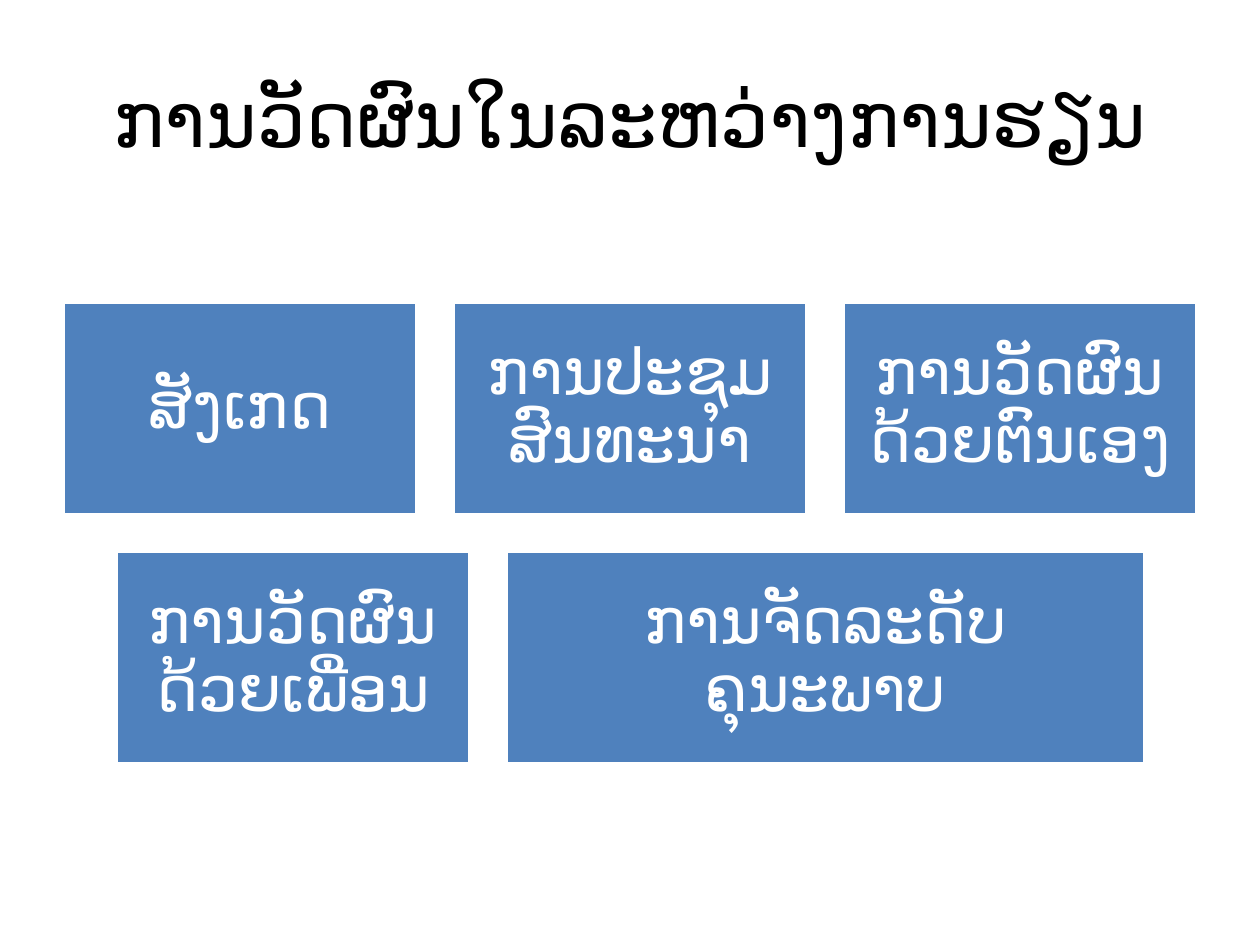
from dataclasses import dataclass

from pptx import Presentation
from pptx.dml.color import RGBColor
from pptx.enum.shapes import MSO_SHAPE
from pptx.enum.text import MSO_ANCHOR, PP_ALIGN
from pptx.slide import Slide
from pptx.text.text import TextFrame
from pptx.util import Emu, Pt

PX_PER_INCH = 126
SLIDE_WIDTH, SLIDE_HEIGHT = 1260, 945
BOX_WIDTH, WIDE_BOX_WIDTH, BOX_HEIGHT = 354, 639, 213
GAP, PADDING, FIRST_ROW_TOP = 36, 19, 302
FONT = "Calibri"


@dataclass(frozen=True)
class Method:
    text: str
    width: int = BOX_WIDTH


TITLE = "ການວັດຜົນໃນລະຫວ່າງການຮຽນ"
METHOD_ROWS = [
    [
        Method("ສັງເກດ"),
        Method("ການປະຊຸມສົນທະນາ"),
        Method("ການວັດຜົນດ້ວຍຕົນເອງ"),
    ],
    [
        Method("ການວັດຜົນດ້ວຍເພື່ອນ"),
        Method("ການຈັດລະດັບຄຸນະພາບ", WIDE_BOX_WIDTH),
    ],
]


def px(length: int) -> Emu:
    return Emu(round(length * 914400 / PX_PER_INCH))


def color(value: str) -> RGBColor:
    return RGBColor.from_string(value)


def write_text(text_frame: TextFrame, text: str, size: int, text_color: str) -> None:
    text_frame.text = text
    text_frame.word_wrap = True
    text_frame.vertical_anchor = MSO_ANCHOR.MIDDLE
    paragraph = text_frame.paragraphs[0]
    paragraph.alignment = PP_ALIGN.CENTER
    font = paragraph.runs[0].font
    font.name = FONT
    font.size = Pt(size)
    font.color.rgb = color(text_color)


def draw_title(slide: Slide) -> None:
    title = slide.shapes.title
    title.left, title.top = px(63), px(38)
    title.width, title.height = px(1134), px(157)
    write_text(title.text_frame, TITLE, 44, "000000")


def draw_method(slide: Slide, method: Method, left: int, top: int) -> None:
    shape = slide.shapes.add_shape(
        MSO_SHAPE.RECTANGLE, px(left), px(top), px(method.width), px(BOX_HEIGHT)
    )
    shape.shadow.inherit = False
    shape.fill.solid()
    shape.fill.fore_color.rgb = color("4F81BD")
    shape.line.color.rgb = color("FFFFFF")
    shape.line.width = Pt(2)
    text_frame = shape.text_frame
    text_frame.margin_left = text_frame.margin_right = px(PADDING)
    text_frame.margin_top = text_frame.margin_bottom = px(PADDING)
    write_text(text_frame, method.text, 36, "FFFFFF")
    text_frame.paragraphs[0].line_spacing = 0.9
    text_frame.paragraphs[0].space_after = Pt(12.6)


def draw_row(slide: Slide, methods: list[Method], top: int) -> None:
    row_width = sum(method.width for method in methods) + GAP * (len(methods) - 1)
    left = round((SLIDE_WIDTH - row_width) / 2)
    for method in methods:
        draw_method(slide, method, left, top)
        left += method.width + GAP


def main() -> None:
    presentation = Presentation()
    presentation.slide_width = px(SLIDE_WIDTH)
    presentation.slide_height = px(SLIDE_HEIGHT)
    slide = presentation.slides.add_slide(presentation.slide_layouts[5])
    draw_title(slide)
    for row, methods in enumerate(METHOD_ROWS):
        draw_row(slide, methods, FIRST_ROW_TOP + row * (BOX_HEIGHT + GAP))
    presentation.save("out.pptx")


if __name__ == "__main__":
    main()
